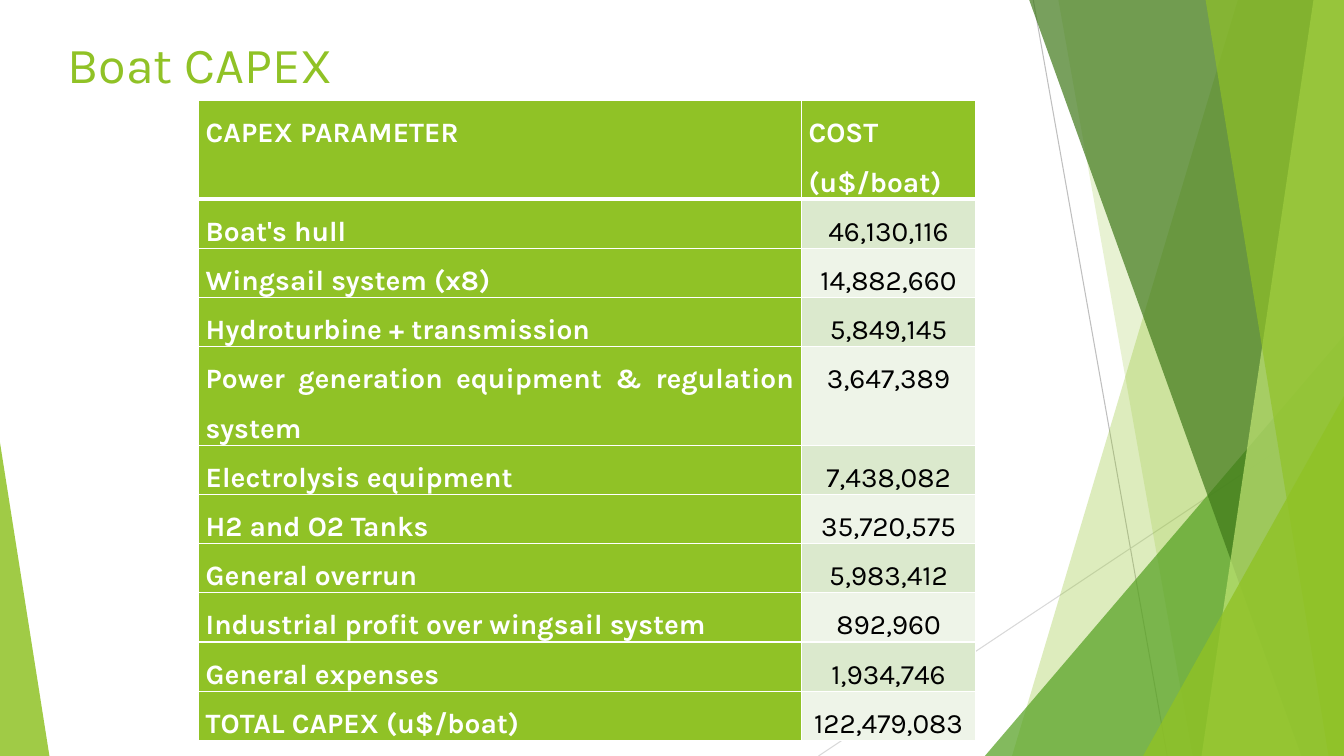
from dataclasses import dataclass

from lxml import etree
from pptx import Presentation
from pptx import util as u
from pptx.dml.color import RGBColor
from pptx.enum import shapes, text
from pptx.oxml import ns


@dataclass(frozen=True)
class Theme:
    """Colours, font and type sizes of the deck."""
    font: str = "Karla"
    title_size: int = 36
    body_size: int = 20
    lime: str = "90C226"
    pale_lime: str = "C0E474"
    green: str = "54A021"
    dark_green: str = "3F7819"
    white: str = "FFFFFF"
    black: str = "000000"
    odd_row: str = "DBE9CD"
    even_row: str = "EEF4E8"
    grey: str = "BFBFBF"
    light_grey: str = "D9D9D9"


def put(obj, values):
    """Set each named attribute of an object."""
    for name, value in values.items():
        setattr(obj, name, value)


def sub(parent, tag, **attrs):
    """Append a drawing element to a parent."""
    return etree.SubElement(parent, ns.qn("a:" + tag), attrs)


class SlideMaker:
    """Draws themed elements, with lengths in percent of the slide's size."""

    def __init__(self, prs, theme):
        """Add a blank slide."""
        self.prs, self.theme = prs, theme
        self.slide = prs.slides.add_slide(prs.slide_layouts[6])

    def x(self, share):
        """Convert a share of the width."""
        return u.Emu(round(self.prs.slide_width * share / 100))

    def y(self, share):
        """Convert a share of the height."""
        return u.Emu(round(self.prs.slide_height * share / 100))

    def line(self, x1, y1, x2, y2, colour):
        """Draw a thin straight line."""
        s = self.slide.shapes.add_connector(
            shapes.MSO_CONNECTOR.STRAIGHT,
            self.x(x1), self.y(y1), self.x(x2), self.y(y2))
        s.line.width = u.Pt(0.75)
        s.line.color.rgb = RGBColor.from_string(colour)
        sub(s.element.spPr, "effectLst")

    def paint(self, s, colour, opacity):
        """Give a shape a see-through fill and no outline."""
        s.shadow.inherit = False
        s.fill.solid()
        s.fill.fore_color.rgb = RGBColor.from_string(colour)
        s.line.fill.background()
        rgb = s.element.xpath("./p:spPr/a:solidFill/a:srgbClr")[0]
        sub(rgb, "alpha", val=str(opacity * 1000))

    def band(self, top, bottom, colour, opacity):
        """Fill from a slanted left edge to the slide's right side."""
        points = [(self.x(a), self.y(b))
                  for a, b in ((top, 0), (100, 0), (100, 100), (bottom, 100))]
        outline = self.slide.shapes.build_freeform(*points[0], scale=1.0)
        outline.add_line_segments(points[1:], close=True)
        self.paint(outline.convert_to_shape(), colour, opacity)

    def wedge(self, left, top, width, apex, colour, opacity):
        """Draw a right triangle standing on the slide's bottom edge."""
        s = self.slide.shapes.add_shape(
            shapes.MSO_SHAPE.ISOSCELES_TRIANGLE,
            self.x(left), self.y(top), self.x(width), self.y(100 - top))
        s.adjustments[0] = apex
        self.paint(s, colour, opacity)

    def paragraph(self, tf, words, size, colour, bold=False, **layout):
        """Fill the first paragraph with one styled run."""
        p = tf.paragraphs[0]
        put(p, layout)
        r = p.add_run()
        r.text = words
        put(r.font, {"name": self.theme.font, "size": u.Pt(size), "bold": bold})
        r.font.color.rgb = RGBColor.from_string(colour)

    def title(self, words, left, top, width, height):
        """Add the slide's heading."""
        s = self.slide.shapes.add_textbox(
            self.x(left), self.y(top), self.x(width), self.y(height))
        put(s.text_frame, {"word_wrap": True,
                           "vertical_anchor": text.MSO_ANCHOR.TOP})
        self.paragraph(s.text_frame, words, self.theme.title_size,
                       self.theme.lime)

    def borders(self, cell, widths):
        """Draw white borders on a cell's sides."""
        tc_pr = cell._tc.get_or_add_tcPr()
        for place, (side, width) in enumerate(widths.items()):
            ln = sub(tc_pr, "ln" + side, w=str(u.Pt(width)))
            sub(sub(ln, "solidFill"), "srgbClr", val=self.theme.white)
            tc_pr.insert(place, ln)

    def cell(self, cell, words, row, col):
        """Fill and letter one table cell."""
        t = self.theme
        strong = row == 0 or col == 0
        cell.fill.solid()
        fill = t.lime if strong else (t.odd_row if row % 2 else t.even_row)
        cell.fill.fore_color.rgb = RGBColor.from_string(fill)
        put(cell, {"margin_left": self.x(0.53), "margin_right": self.x(0.53),
                   "margin_top": 0, "margin_bottom": 0})
        self.borders(cell, {"L": 1, "R": 1, "T": 3 if row == 1 else 1,
                            "B": 3 if row == 0 else 1})
        align = text.PP_ALIGN.JUSTIFY if strong else text.PP_ALIGN.CENTER
        self.paragraph(cell.text_frame, words, t.body_size,
                       t.white if strong else t.black, strong,
                       alignment=align, line_spacing=1.5)

    def table(self, rows, left, top, widths, row_height, double_rows):
        """Draw a table with some rows two lines high."""
        heights = [row_height * (2 if i in double_rows else 1)
                   for i in range(len(rows))]
        tbl = self.slide.shapes.add_table(
            len(rows), len(widths), self.x(left), self.y(top),
            self.x(sum(widths)), self.y(sum(heights))).table
        put(tbl, {"first_row": False, "horz_banding": False})
        for col, width in enumerate(widths):
            tbl.columns[col].width = self.x(width)
        for row, values in enumerate(rows):
            tbl.rows[row].height = self.y(heights[row])
            for col, words in enumerate(values):
                self.cell(tbl.cell(row, col), words, row, col)


COSTS = [
    ("CAPEX PARAMETER", "COST (u$/boat)"),
    ("Boat's hull", "46,130,116"),
    ("Wingsail system (x8)", "14,882,660"),
    ("Hydroturbine + transmission", "5,849,145"),
    ("Power generation equipment & regulation system", "3,647,389"),
    ("Electrolysis equipment", "7,438,082"),
    ("H2 and O2 Tanks", "35,720,575"),
    ("General overrun", "5,983,412"),
    ("Industrial profit over wingsail system", "892,960"),
    ("General expenses", "1,934,746"),
    ("TOTAL CAPEX (u$/boat)", "122,479,083"),
]


def main():
    """Build the boat cost slide."""
    prs = Presentation()
    put(prs, {"slide_width": u.Inches(13.33), "slide_height": u.Inches(7.5)})
    t = Theme()
    m = SlideMaker(prs, t)
    m.line(76.88, 0, 86.85, 100, t.grey)
    m.line(100, 53.73, 60.9, 100, t.light_grey)
    m.band(92.1, 75.3, t.lime, 30)
    m.band(78.75, 88.73, t.lime, 20)
    m.wedge(73.28, 44.4, 26.72, 1, t.green, 72)
    m.band(76.58, 96.83, t.dark_green, 70)
    m.band(97.73, 89.4, t.pale_lime, 70)
    m.band(89.7, 98.85, t.lime, 65)
    m.wedge(85.05, 52.4, 14.95, 1, t.lime, 80)
    m.wedge(0, 58.53, 3.68, 0, t.lime, 85)
    m.table(COSTS, 14.78, 13.33, (44.85, 12.98), 6.5, (0, 4))
    m.title("Boat CAPEX", 4.28, 3.73, 70.5, 19.2)
    prs.save("out.pptx")


if __name__ == "__main__":
    main()
